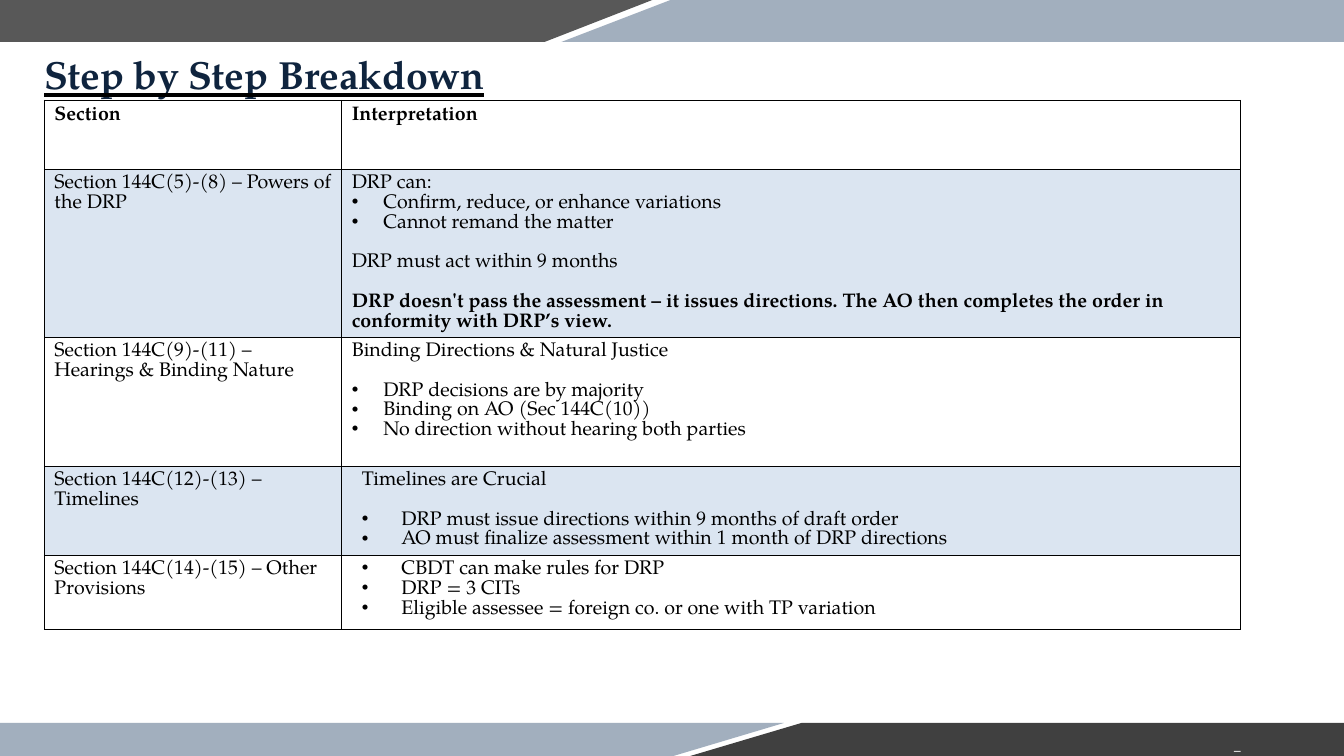
import pptx
import pptx.util
import pptx.dml.color
import pptx.enum.text
import pptx.oxml
import pptx.oxml.ns

Pt = pptx.util.Pt

# Theme
THEME = {
    "font": "TeX Gyre Pagella", "title": 28, "body": 14, "line": 14.1,
    "ink": "000000", "navy": "0F243E", "gray": "585858", "dark": "404040",
    "steel": "17375E", "blue": "4F81BD", "white": "FFFFFF",
}

# Content: each line is (text, kind, gap before it in lines)
TITLE = "Step by Step Breakdown"
ROWS = [
    (49.2, "Section", [("Interpretation", "bold", 0)]),
    (120, "Section 144C(5)-(8) – Powers of the DRP", [
        ("DRP can:", "plain", 0),
        ("Confirm, reduce, or enhance variations", "bullet", 0),
        ("Cannot remand the matter", "bullet", 0),
        ("DRP must act within 9 months", "plain", 1),
        ("DRP doesn't pass the assessment – it issues directions. The AO then "
         "completes the order in conformity with DRP’s view.", "bold", 1)]),
    (92.2, "Section 144C(9)-(11) – Hearings & Binding Nature", [
        ("Binding Directions & Natural Justice", "plain", 0),
        ("DRP decisions are by majority", "bullet", 1),
        ("Binding on AO (Sec 144C(10))", "bullet", 0),
        ("No direction without hearing both parties", "bullet", 0)]),
    (63.6, "Section 144C(12)-(13) – Timelines", [
        ("Timelines are Crucial", "inset", 0),
        ("DRP must issue directions within 9 months of draft order", "deep", 1),
        ("AO must finalize assessment within 1 month of DRP directions", "deep", 0)]),
    (52.8, "Section 144C(14)-(15) – Other Provisions", [
        ("CBDT can make rules for DRP", "deep", 0),
        ("DRP = 3 CITs", "deep", 0),
        ("Eligible assessee = foreign co. or one with TP variation", "deep", 0)]),
]
COLS = (212.4, 642.2)
# Left margin and first-line indent of each kind
INDENT = {"plain": (0, 0), "bold": (0, 0), "inset": (7.2, 0),
          "bullet": (22.5, -22.5), "deep": (35.5, -28.3)}

# Bands: outline, colour, opacity in percent
WIDE, HIGH, TOP, FOOT = 960, 540, 30, 516.4
BANDS = [
    ([(0, 0), (466, 0), (389, TOP), (0, TOP)], "gray", 100),
    ([(479, 0), (WIDE, 0), (WIDE, TOP), (401, TOP)], "steel", 40),
    ([(572.5, FOOT), (WIDE, FOOT), (WIDE, HIGH), (493, HIGH)], "dark", 100),
    ([(0, FOOT), (560, FOOT), (481, HIGH), (0, HIGH)], "steel", 40),
    ([(881.3, 536.4), (886.3, 536.4), (886.3, 537), (881.3, 537)], "white", 80),
]


def color(name):
    return pptx.dml.color.RGBColor.from_string(THEME[name])


def node(xml):
    return pptx.oxml.parse_xml(
        xml.replace(">", " " + pptx.oxml.ns.nsdecls("a") + ">", 1)
        if "/>" not in xml.split(">")[0] + ">"
        else xml.replace("/>", " " + pptx.oxml.ns.nsdecls("a") + "/>", 1))


def paint(fill, props, name, alpha):
    fill.solid()
    fill.fore_color.rgb = color(name)
    if alpha < 100:
        tint = props.find(".//" + pptx.oxml.ns.qn("a:srgbClr"))
        tint.append(node(f'<a:alpha val="{alpha * 1000}"/>'))


def write(para, text, size, name, bold):
    run = para.add_run()
    run.text = text
    run.font.name = THEME["font"]
    run.font.size = Pt(THEME[size])
    run.font.bold = bold
    run.font.color.rgb = color(name)
    return run


def fill_cell(cell, lines, shade):
    props = cell._tc.get_or_add_tcPr()
    if shade:
        paint(cell.fill, props, "blue", 20)
    else:
        cell.fill.background()
    for spot, side in enumerate("LRTB"):
        props.insert(spot, node(
            f'<a:ln{side} w="12700"><a:solidFill><a:srgbClr val="{THEME["ink"]}"/>'
            f'</a:solidFill></a:ln{side}>'))
    cell.margin_left, cell.margin_right = Pt(7.2), Pt(5)
    cell.margin_top = cell.margin_bottom = Pt(3.6)
    frame = cell.text_frame
    for i, (text, kind, gap) in enumerate(lines):
        para = frame.add_paragraph() if i else frame.paragraphs[0]
        para.line_spacing = Pt(THEME["line"])
        para.space_before = Pt(gap * THEME["line"])
        left, first = INDENT[kind]
        form = para._p.get_or_add_pPr()
        form.set("marL", str(Pt(left)))
        form.set("indent", str(Pt(first)))
        if first:
            form.append(node('<a:buChar char="•"/>'))
        write(para, text, "body", "ink", kind == "bold")


def main():
    deck = pptx.Presentation()
    deck.slide_width, deck.slide_height = Pt(WIDE), Pt(HIGH)
    slide = deck.slides.add_slide(deck.slide_layouts[6])

    # Bands at top and foot
    for points, name, alpha in BANDS:
        spots = [(Pt(x), Pt(y)) for x, y in points]
        build = slide.shapes.build_freeform(*spots[0], scale=1.0)
        build.add_line_segments(spots[1:], close=True)
        band = build.convert_to_shape()
        band.shadow.inherit = False
        band.line.fill.background()
        paint(band.fill, band._element.spPr, name, alpha)

    # Title with a black underline
    box = slide.shapes.add_textbox(Pt(31.7), Pt(36), Pt(897), Pt(36))
    frame = box.text_frame
    frame.word_wrap = True
    frame.margin_left = frame.margin_right = frame.margin_top = frame.margin_bottom = 0
    para = frame.paragraphs[0]
    para.space_before = Pt(1.1)
    run = write(para, TITLE, "title", "navy", True)
    run.font.underline = pptx.enum.text.MSO_UNDERLINE.HEAVY_LINE
    run.font._element.find(pptx.oxml.ns.qn("a:solidFill")).addnext(node(
        f'<a:uFill><a:solidFill><a:srgbClr val="{THEME["ink"]}"/></a:solidFill></a:uFill>'))

    # Table of sections
    table = slide.shapes.add_table(
        len(ROWS), len(COLS), Pt(31.7), Pt(71.8), Pt(sum(COLS)),
        Pt(sum(row[0] for row in ROWS))).table
    table.first_row = table.horz_banding = False
    for col, wide in zip(table.columns, COLS):
        col.width = Pt(wide)
    for i, (high, name, lines) in enumerate(ROWS):
        table.rows[i].height = Pt(high)
        label = [(name, "plain" if i else "bold", 0)]
        for j, part in enumerate((label, lines)):
            fill_cell(table.cell(i, j), part, i % 2 == 1)

    deck.save("out.pptx")


if __name__ == "__main__":
    main()
